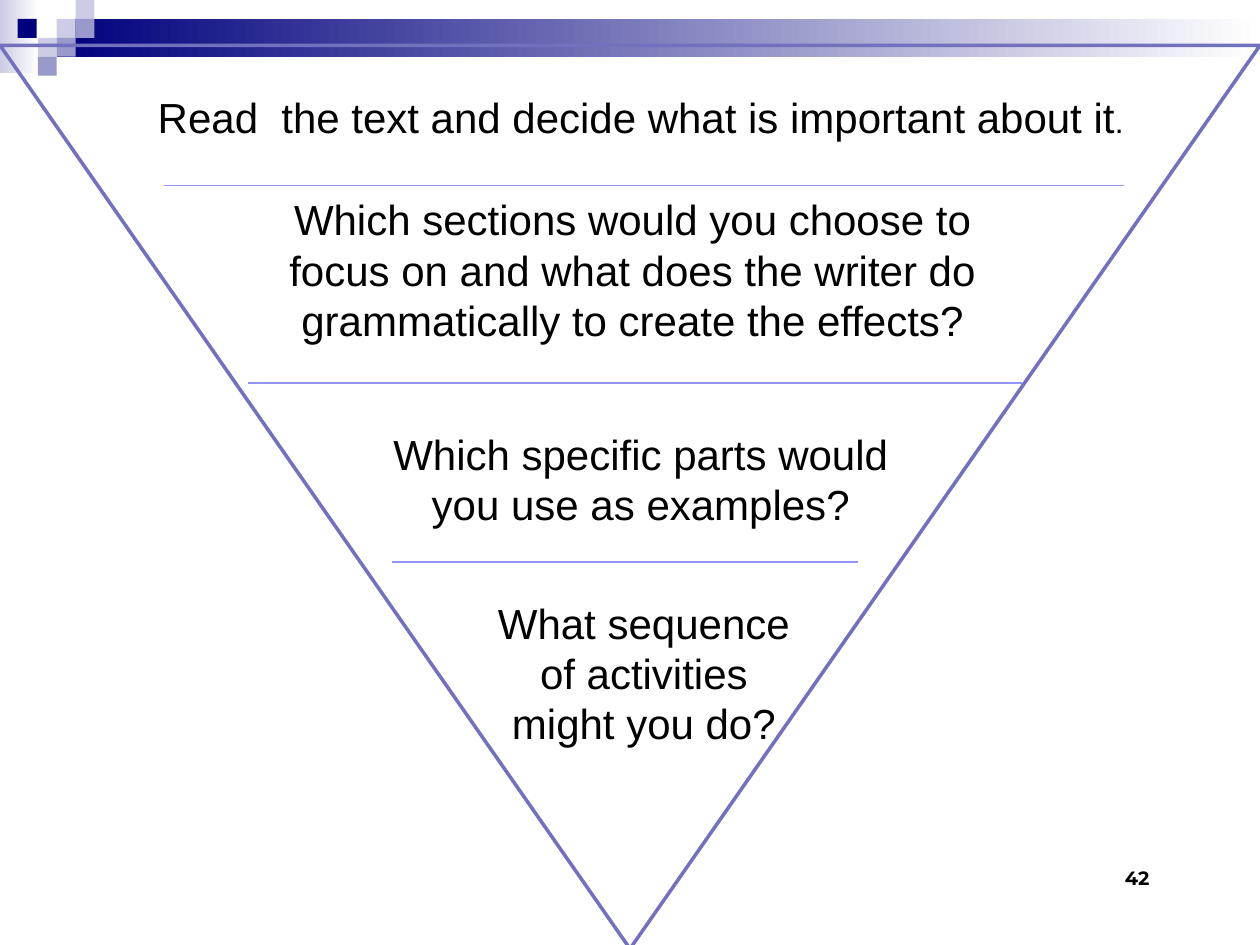
from dataclasses import dataclass

from lxml.etree import SubElement
from pptx import Presentation
from pptx.dml.color import RGBColor
from pptx.enum.shapes import MSO_CONNECTOR as Connector, MSO_SHAPE as Shape
from pptx.enum.text import MSO_AUTO_SIZE as AutoSize, PP_ALIGN as Align
from pptx.oxml.ns import qn
from pptx.slide import Slide
from pptx.util import Inches, Pt

COLORS = {
    "navy": "00007D",
    "lavender": "CCCCE6",
    "periwinkle": "9999CC",
    "outline": "7171BD",
    "divider": "9393FC",
    "white": "FFFFFF",
    "black": "000000",
}
COLUMNS, ROWS = 100, 75


@dataclass
class FunnelSlide:
    """Draws styled elements on a slide divided into 100 columns and 75 rows."""

    slide: Slide
    width: int
    height: int
    font: str = "Arial"
    text_size: float = 24

    def place(self, *lengths):
        cells = (self.width / COLUMNS, self.height / ROWS)
        return [round(length * cells[index % 2]) for index, length in enumerate(lengths)]

    def color(self, name):
        return RGBColor.from_string(COLORS[name])

    def block(self, box, *fills):
        shape = self.slide.shapes.add_shape(Shape.RECTANGLE, *self.place(*box))
        shape.shadow.inherit = False
        shape.line.fill.background()
        if len(fills) == 1:
            shape.fill.solid()
            shape.fill.fore_color.rgb = self.color(fills[0])
            return
        shape.fill.gradient()
        shape.fill.gradient_angle = 0
        for position, (stop, name) in enumerate(zip(shape.fill.gradient_stops, fills)):
            stop.position = position
            stop.color.rgb = self.color(name)

    def funnel(self, box):
        shape = self.slide.shapes.add_shape(Shape.ISOSCELES_TRIANGLE, *self.place(*box))
        shape.shadow.inherit = False
        shape.rotation = 180
        shape.fill.background()
        shape.line.color.rgb = self.color("outline")
        shape.line.width = Pt(2)

    def divider(self, left, right, row):
        ends = self.place(left, row, right, row)
        line = self.slide.shapes.add_connector(Connector.STRAIGHT, *ends)
        line.line.color.rgb = self.color("divider")
        line.line.width = Pt(0.75)
        SubElement(line._element.spPr, qn("a:effectLst"))

    def text(self, box, runs, align=Align.CENTER, font=None, bold=False):
        shape = self.slide.shapes.add_textbox(*self.place(*box))
        frame = shape.text_frame
        frame.word_wrap = True
        frame.auto_size = AutoSize.NONE
        paragraph = frame.paragraphs[0]
        paragraph.alignment = align
        for words, size in runs:
            run = paragraph.add_run()
            run.text = words
            run.font.name = font or self.font
            run.font.size = Pt(size or self.text_size)
            run.font.bold = bold
            run.font.color.rgb = self.color("black")


BANDS = [((0, 0, 3.1, 5.8), "lavender"), ((4.5, 1.5, 95.5, 3), "navy")]
TILE = 1.5
TILES = [
    (4.5, 1.5, "lavender"),
    (6, 0, "lavender"),
    (6, 1.5, "periwinkle"),
    (3, 3, "lavender"),
    (1.4, 1.5, "navy"),
    (4.5, 3, "periwinkle"),
    (3, 4.5, "periwinkle"),
]
DIVIDERS = [(13, 89.2, 14.7), (19.7, 81.1, 30.4), (31.1, 68.1, 44.6)]
STEPS = [
    ((9.1, 6.8, 83.5, 5),
     [("Read  the text and decide what is important about it", None), (".", 18)]),
    ((19.3, 14.9, 61.8, 13.1),
     [("Which sections would you choose to focus on and what does the writer do "
       "grammatically to create the effects?", None)]),
    ((28, 33.5, 45.7, 9.1),
     [("Which specific parts would you use as examples?", None)]),
    ((37.7, 46.9, 26.8, 13.1),
     [("What sequence of activities might you do?", None)]),
]


def main():
    presentation = Presentation()
    presentation.slide_width = Inches(10)
    presentation.slide_height = Inches(7.5)
    slide = presentation.slides.add_slide(presentation.slide_layouts[6])
    page = FunnelSlide(slide, presentation.slide_width, presentation.slide_height)

    for box, color in BANDS:
        page.block(box, color, "white")
    for left, top, color in TILES:
        page.block((left, top, TILE, TILE), color)
    page.funnel((0, 3.6, 100, 71.7))
    for left, right, row in DIVIDERS:
        page.divider(left, right, row)
    for box, runs in STEPS:
        page.text(box, runs)
    page.text((88.3, 68.3, 23.3, 5), [("42", 11)], Align.LEFT, "Montserrat", True)

    presentation.save("out.pptx")


if __name__ == "__main__":
    main()
